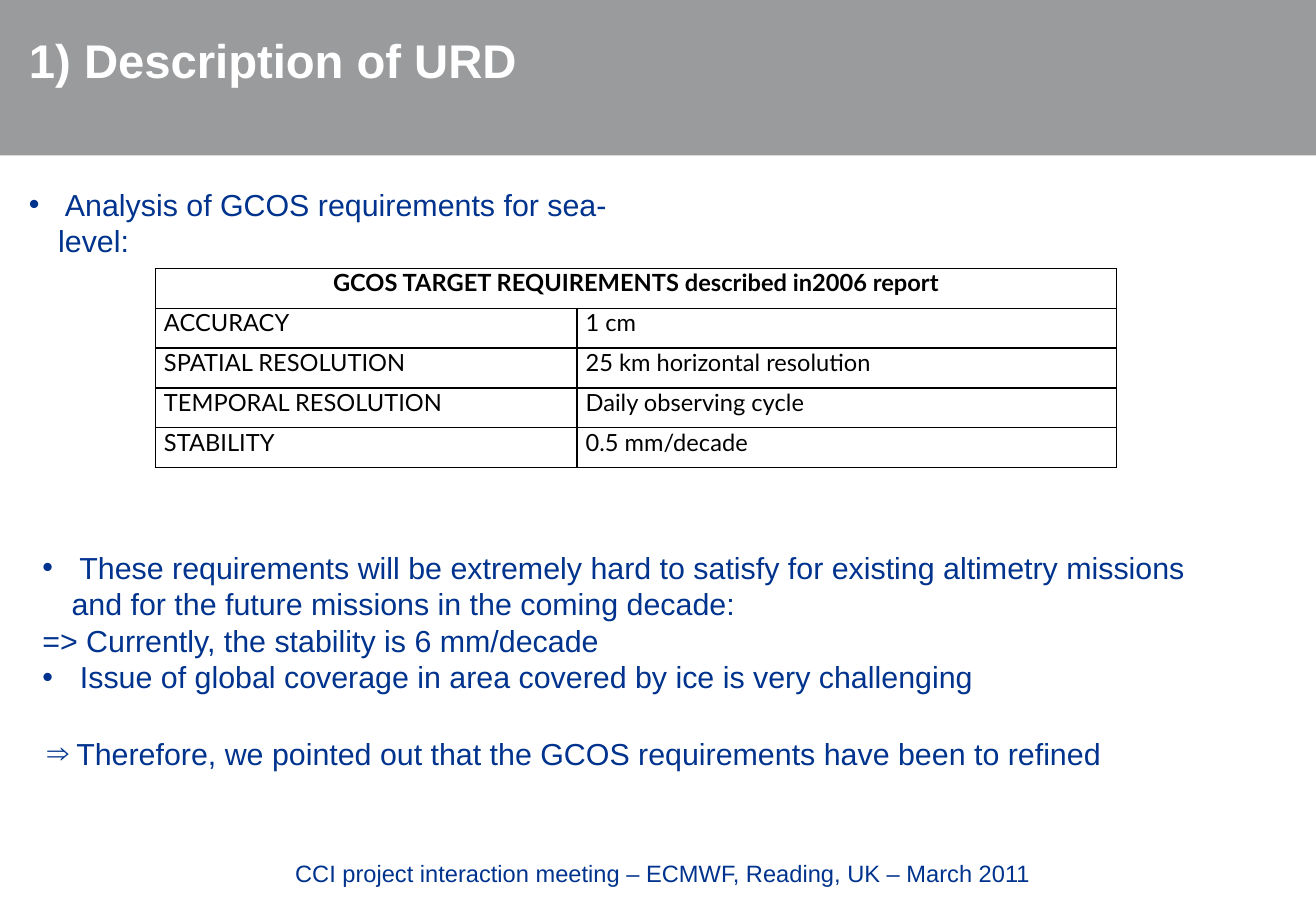
from lxml import etree
from pptx import Presentation
from pptx.enum import shapes, text
from pptx.dml.color import RGBColor
from pptx.oxml import ns
from pptx.util import Inches, Pt

COLORS = {"band": "9A9B9C", "title": "FFFFFF", "body": "00338D",
          "table": "000000", "cell": "FFFFFF"}
HANG = Inches(0.24)
REQUIREMENTS = [
    ("ACCURACY", "1 cm"),
    ("SPATIAL RESOLUTION", "25 km horizontal resolution"),
    ("TEMPORAL RESOLUTION", "Daily observing cycle"),
    ("STABILITY", "0.5 mm/decade"),
]


def rgb(name):
    return RGBColor.from_string(COLORS[name])


def style(p, size, color, font="Arial", bold=False):
    for r in p.runs:
        r.font.size, r.font.name, r.font.bold = Pt(size), font, bold
        r.font.color.rgb = rgb(color)


def add_bullet(p, char):
    """Give the paragraph a bullet with a hanging indent."""
    pPr = p._p.get_or_add_pPr()
    pPr.set("marL", str(HANG))
    pPr.set("indent", str(-HANG))
    etree.SubElement(pPr, ns.qn("a:buFont")).set("typeface", "Arial")
    etree.SubElement(pPr, ns.qn("a:buChar")).set("char", char)


def add_text(s, box, items, size=18, color="body", bold=False):
    """Place a text box of (bullet or None, wording) paragraphs."""
    tf = s.shapes.add_textbox(*map(Inches, box)).text_frame
    tf.word_wrap = True
    for i, (bullet, wording) in enumerate(items):
        p = tf.add_paragraph() if i else tf.paragraphs[0]
        p.text = wording
        if bullet:
            add_bullet(p, bullet)
        style(p, size, color, bold=bold)
    return tf


def add_header(s, box, title):
    x, y, w, h = box
    band = s.shapes.add_shape(shapes.MSO_SHAPE.RECTANGLE, *map(Inches, box))
    band.shadow.inherit = False
    band.fill.solid()
    band.fill.fore_color.rgb = rgb("band")
    band.line.fill.background()
    tf = add_text(s, (x + 0.14, y + 0.28, w - 0.47, 0.77), [(None, title)],
                  28, "title", True)
    tf.paragraphs[0].line_spacing = 0.85


def add_borders(cell):
    tcPr = cell._tc.get_or_add_tcPr()
    for i, side in enumerate(("lnL", "lnR", "lnT", "lnB")):
        ln = etree.Element(ns.qn("a:" + side), w=str(Pt(1)))
        fill = etree.SubElement(ln, ns.qn("a:solidFill"))
        etree.SubElement(fill, ns.qn("a:srgbClr")).set("val", COLORS["table"])
        tcPr.insert(i, ln)


def add_requirements(s, box, heading, rows):
    x, y, w, h = map(Inches, box)
    table = s.shapes.add_table(len(rows) + 1, 2, x, y, w, h).table
    table.columns[0].width = Inches(3.47)
    table.columns[1].width = w - Inches(3.47)
    table.cell(0, 0).merge(table.cell(0, 1))
    for i, row in enumerate([(heading, ""), *rows]):
        for j, wording in enumerate(row):
            cell = table.cell(i, j)
            cell.fill.solid()
            cell.fill.fore_color.rgb = rgb("cell")
            add_borders(cell)
            cell.margin_left = cell.margin_right = Inches(0.07)
            cell.margin_top = cell.margin_bottom = 0
            p = cell.text_frame.paragraphs[0]
            p.text = wording
            p.alignment = text.PP_ALIGN.JUSTIFY if i else text.PP_ALIGN.CENTER
            p.space_after = Pt(6)
            style(p, 14, "table", "Lato", bold=i == 0)


def main():
    prs = Presentation()
    prs.slide_width, prs.slide_height = Inches(10.83), Inches(7.5)
    s = prs.slides.add_slide(prs.slide_layouts[6])
    add_header(s, (0, 0, 10.83, 1.28), "1) Description of URD")
    add_text(s, (2.33, 7.02, 6.71, 0.4), [
        (None, "CCI project interaction meeting – ECMWF, Reading, UK – March 2011"),
    ], 14)
    add_requirements(s, (1.28, 2.21, 7.91, 1.64),
                     "GCOS TARGET REQUIREMENTS described in2006 report", REQUIREMENTS)
    add_text(s, (0.14, 1.48, 5.42, 0.4),
             [("•", " Analysis of GCOS requirements for sea-level:")])
    add_text(s, (0.25, 4.47, 10.08, 1.62), [
        ("•", " These requirements will be extremely hard to satisfy for existing "
              "altimetry missions and for the future missions in the coming decade:"),
        (None, "=> Currently, the stability is 6 mm/decade"),
        ("•", " Issue of global coverage in area covered by ice is very challenging"),
    ])
    add_text(s, (0.29, 6, 10.14, 0.71), [
        ("⇒", "Therefore, we pointed out that the GCOS requirements have been to refined"),
    ])
    prs.save("out.pptx")


if __name__ == "__main__":
    main()
